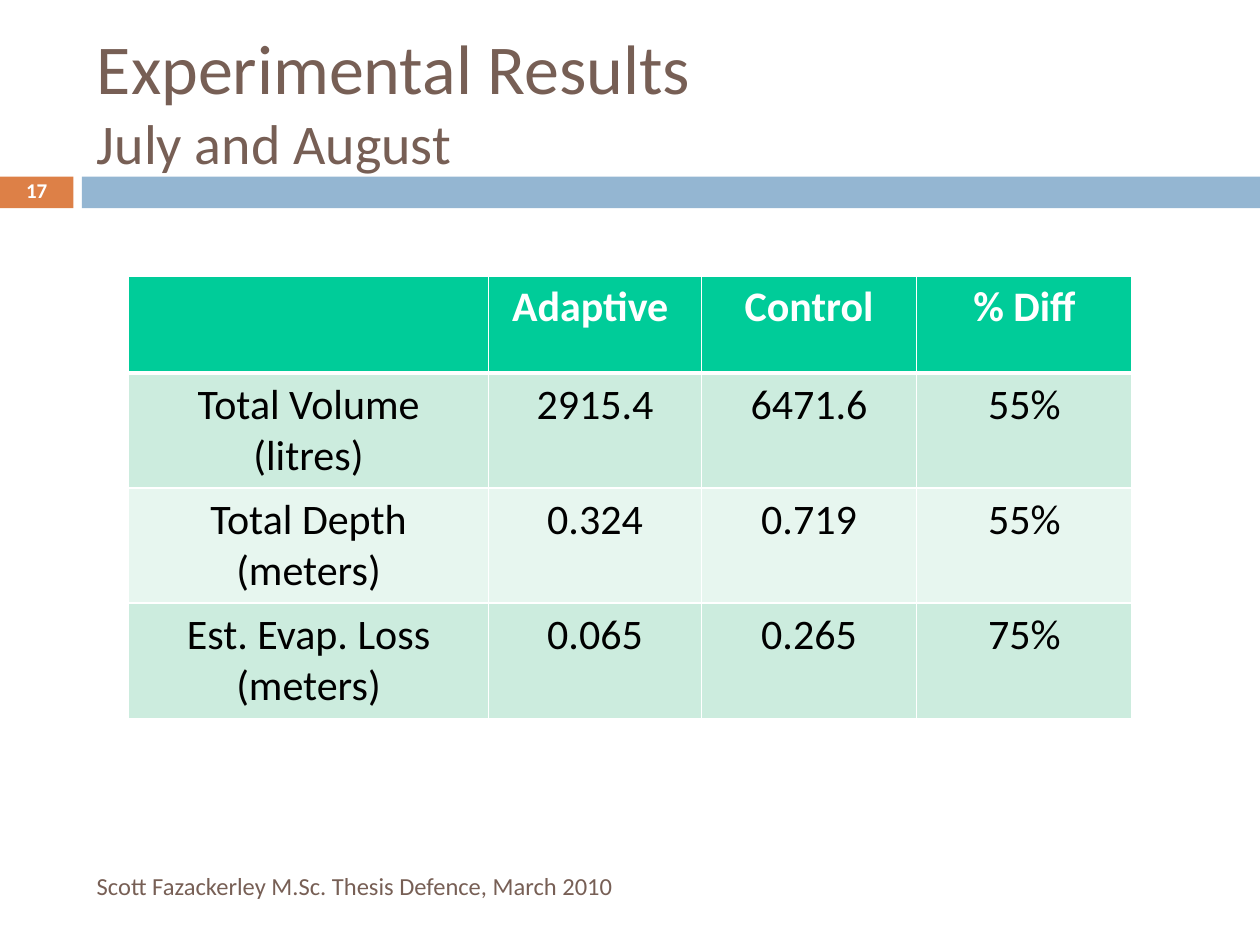
from lxml.etree import SubElement
from pptx import Presentation
from pptx.dml.color import RGBColor
from pptx.enum.shapes import MSO_SHAPE as Shape
from pptx.enum.text import MSO_ANCHOR as Anchor, MSO_AUTO_SIZE as AutoSize, PP_ALIGN as Align
from pptx.oxml.ns import qn
from pptx.util import Cm, Pt

WHITE = RGBColor(0xFF, 0xFF, 0xFF)
BLACK = RGBColor(0x00, 0x00, 0x00)
BROWN = RGBColor(0x77, 0x5F, 0x55)
ORANGE = RGBColor(0xDD, 0x80, 0x47)
BLUE = RGBColor(0x94, 0xB6, 0xD2)
GREEN = RGBColor(0x00, 0xCC, 0x99)
BANDS = (RGBColor(0xCC, 0xEC, 0xDE), RGBColor(0xE7, 0xF6, 0xEF))

RESULTS = [
    ("", "Adaptive ", "Control", "% Diff"),
    ("Total Volume (litres)", "2915.4", "6471.6", "55%"),
    ("Total Depth (meters)", "0.324", "0.719", "55%"),
    ("Est. Evap. Loss (meters)", "0.065", "0.265", "75%"),
]
COLUMN_WIDTHS = (7.26, 4.29, 4.34, 4.34)
HEADER_HEIGHT, BODY_HEIGHT = 1.96, 2.32


class ResultSlide:
    def __init__(self, slide, font_name="Calibri"):
        self.slide = slide
        self.font_name = font_name

    def style(self, paragraph, size, color, bold=False, align=Align.LEFT):
        font = paragraph.font
        font.name, font.size, font.bold = self.font_name, Pt(size), bold
        font.color.rgb = color
        paragraph.alignment = align

    def title(self, left, top, width, height, lines):
        """Fill the title placeholder with (text, size) lines."""
        title = self.slide.shapes.title
        title.left, title.top, title.width, title.height = map(Cm, (left, top, width, height))
        frame = title.text_frame
        frame.text = "\n".join(text for text, _ in lines)
        frame.auto_size = AutoSize.NONE
        frame.vertical_anchor = Anchor.MIDDLE
        for paragraph, (_, size) in zip(frame.paragraphs, lines):
            self.style(paragraph, size, BROWN)

    def bar(self, left, top, width, height, color):
        bar = self.slide.shapes.add_shape(Shape.RECTANGLE, *map(Cm, (left, top, width, height)))
        bar.shadow.inherit = False
        bar.fill.solid()
        bar.fill.fore_color.rgb = color
        bar.line.fill.background()

    def label(self, left, top, width, height, text, size, color, line_spacing=1.0, **look):
        frame = self.slide.shapes.add_textbox(*map(Cm, (left, top, width, height))).text_frame
        frame.word_wrap = True
        frame.vertical_anchor = Anchor.MIDDLE
        frame.text = text
        paragraph = frame.paragraphs[0]
        paragraph.line_spacing = line_spacing
        self.style(paragraph, size, color, **look)

    def borders(self, cell, top, bottom):
        """Draw white cell borders; top and bottom widths are in points."""
        properties = cell._tc.get_or_add_tcPr()
        for side, width in (("L", 1), ("R", 1), ("T", top), ("B", bottom)):
            line = SubElement(properties, qn(f"a:ln{side}"), w=str(Pt(width)))
            fill = SubElement(line, qn("a:solidFill"))
            SubElement(fill, qn("a:srgbClr"), val=str(WHITE))

    def table(self, left, top, rows, widths, heights):
        frame = self.slide.shapes.add_table(
            len(rows), len(widths), Cm(left), Cm(top), Cm(sum(widths)), Cm(sum(heights)))
        table = frame.table
        for column, width in zip(table.columns, widths):
            column.width = Cm(width)
        for r, (values, height) in enumerate(zip(rows, heights)):
            table.rows[r].height = Cm(height)
            header = r == 0
            for c, value in enumerate(values):
                cell = table.cell(r, c)
                self.borders(cell, top=3 if r == 1 else 1, bottom=3 if header else 1)
                cell.fill.solid()
                cell.fill.fore_color.rgb = GREEN if header else BANDS[(r - 1) % 2]
                cell.text = value
                self.style(cell.text_frame.paragraphs[0], 24, WHITE if header else BLACK,
                           bold=header, align=Align.CENTER)


def main():
    deck = Presentation()
    deck.slide_width, deck.slide_height = Cm(25.4), Cm(19.05)
    results = ResultSlide(deck.slides.add_slide(deck.slide_layouts[5]))

    results.bar(0, 3.56, 1.48, 0.64, ORANGE)
    results.bar(1.65, 3.56, 23.75, 0.64, BLUE)
    results.title(1.7, 0.64, 22.66, 2.74, [("Experimental Results", 40), ("July and August", 32)])
    results.label(0, 3.53, 1.48, 0.69, "17", 12, WHITE,
                  line_spacing=0.8, bold=True, align=Align.CENTER)
    results.label(1.7, 17.35, 15.06, 1.02,
                  "Scott Fazackerley M.Sc. Thesis Defence, March 2010", 14, BROWN)
    body_rows = len(RESULTS) - 1
    results.table(2.59, 5.56, RESULTS, COLUMN_WIDTHS, [HEADER_HEIGHT] + [BODY_HEIGHT] * body_rows)

    deck.save("out.pptx")


if __name__ == "__main__":
    main()
